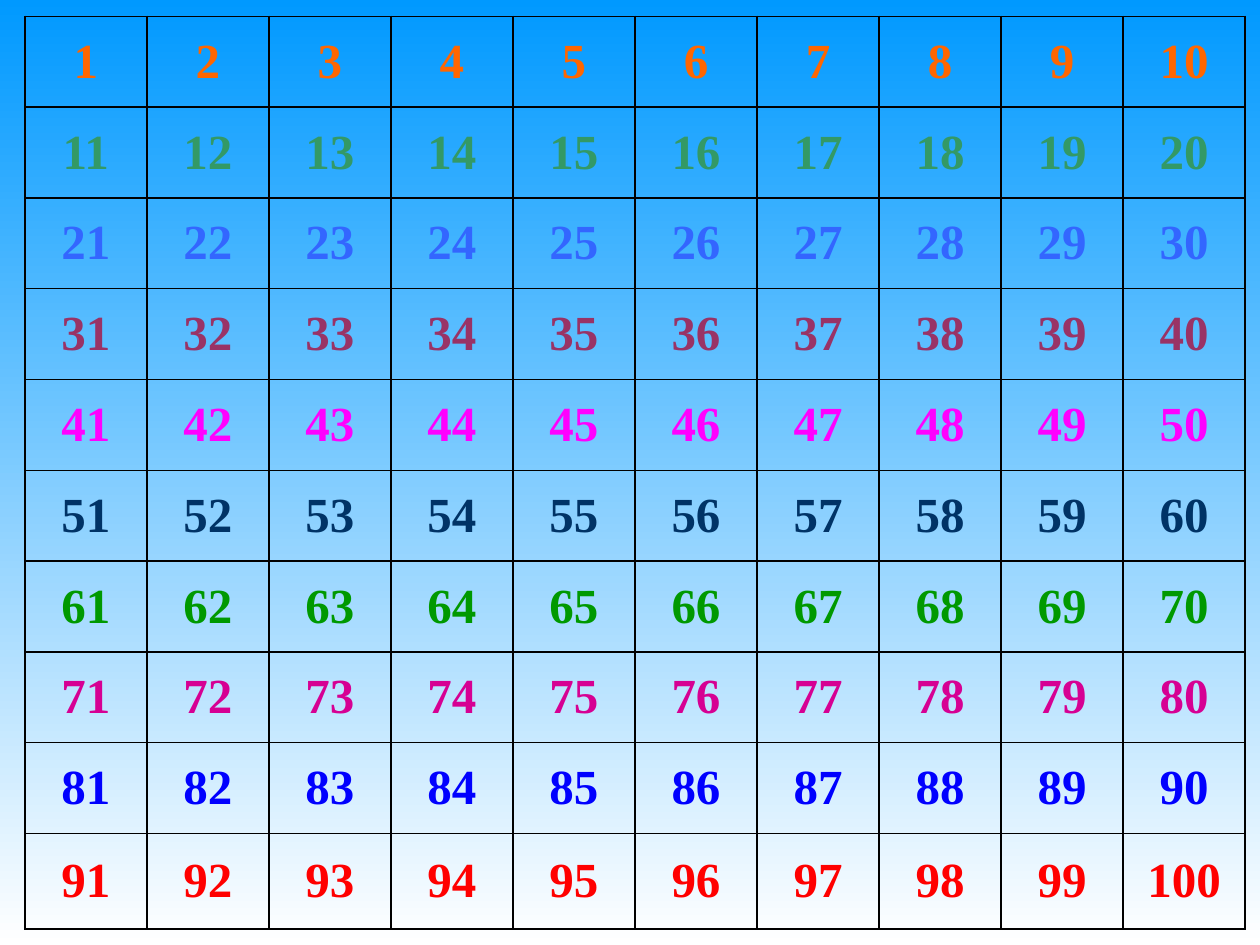
from lxml import etree
from pptx import Presentation
from pptx.dml.color import RGBColor
from pptx.enum.text import MSO_ANCHOR, PP_ALIGN
from pptx.oxml.ns import qn
from pptx.util import Cm, Pt

CENTER = PP_ALIGN.CENTER
MIDDLE = MSO_ANCHOR.MIDDLE

COLORS = {
    "sky": "0099FF",
    "white": "FFFFFF",
    "border": "000000",
    "orange": "FF6600",
    "sea": "339966",
    "azure": "3366FF",
    "plum": "993366",
    "magenta": "FF00FF",
    "navy": "003366",
    "green": "009900",
    "pink": "D60093",
    "blue": "0000FF",
    "red": "FF0000",
}
ROW_COLORS = ["orange", "sea", "azure", "plum", "magenta",
              "navy", "green", "pink", "blue", "red"]
COLUMNS = 10
COL_WIDTH = 2.46
ROW_HEIGHTS = [1.83] * 9 + [1.93]


class SlideBuilder:
    font = "Times New Roman"
    size = Pt(28)
    border_width = Pt(1)

    def __init__(self, prs):
        self.s = prs.slides.add_slide(prs.slide_layouts[6])

    def background(self, top, bottom):
        fill = self.s.background.fill
        fill.gradient()
        fill.gradient_angle = 270
        for stop, name in zip(fill.gradient_stops, (top, bottom)):
            stop.color.rgb = RGBColor.from_string(COLORS[name])

    def borders(self, cell):
        tc_pr = cell._tc.get_or_add_tcPr()
        for side in ("lnL", "lnR", "lnT", "lnB"):
            ln = etree.SubElement(tc_pr, qn(f"a:{side}"), w=str(self.border_width))
            fill = etree.SubElement(ln, qn("a:solidFill"))
            etree.SubElement(fill, qn("a:srgbClr"), val=COLORS["border"])

    def cell(self, cell, text, color):
        self.borders(cell)
        cell.fill.background()
        cell.vertical_anchor = MIDDLE
        cell.margin_left = cell.margin_right = Cm(0.1)
        cell.margin_top = cell.margin_bottom = 0
        p = cell.text_frame.paragraphs[0]
        p.alignment = CENTER
        r = p.add_run()
        r.text = text
        r.font.name = self.font
        r.font.size = self.size
        r.font.bold = True
        r.font.color.rgb = RGBColor.from_string(COLORS[color])

    def number_table(self, left, top):
        table = self.s.shapes.add_table(
            len(ROW_HEIGHTS), COLUMNS, Cm(left), Cm(top),
            Cm(COL_WIDTH * COLUMNS), Cm(sum(ROW_HEIGHTS))).table
        table.first_row = table.horz_banding = False
        for column in table.columns:
            column.width = Cm(COL_WIDTH)
        for i, (height, color) in enumerate(zip(ROW_HEIGHTS, ROW_COLORS)):
            table.rows[i].height = Cm(height)
            for j in range(COLUMNS):
                self.cell(table.cell(i, j), str(i * COLUMNS + j + 1), color)


def main():
    prs = Presentation()
    prs.slide_width = Cm(25.4)
    prs.slide_height = Cm(19.05)
    builder = SlideBuilder(prs)
    builder.background("sky", "white")
    builder.number_table(0.5, 0.33)
    prs.save("out.pptx")


if __name__ == "__main__":
    main()
